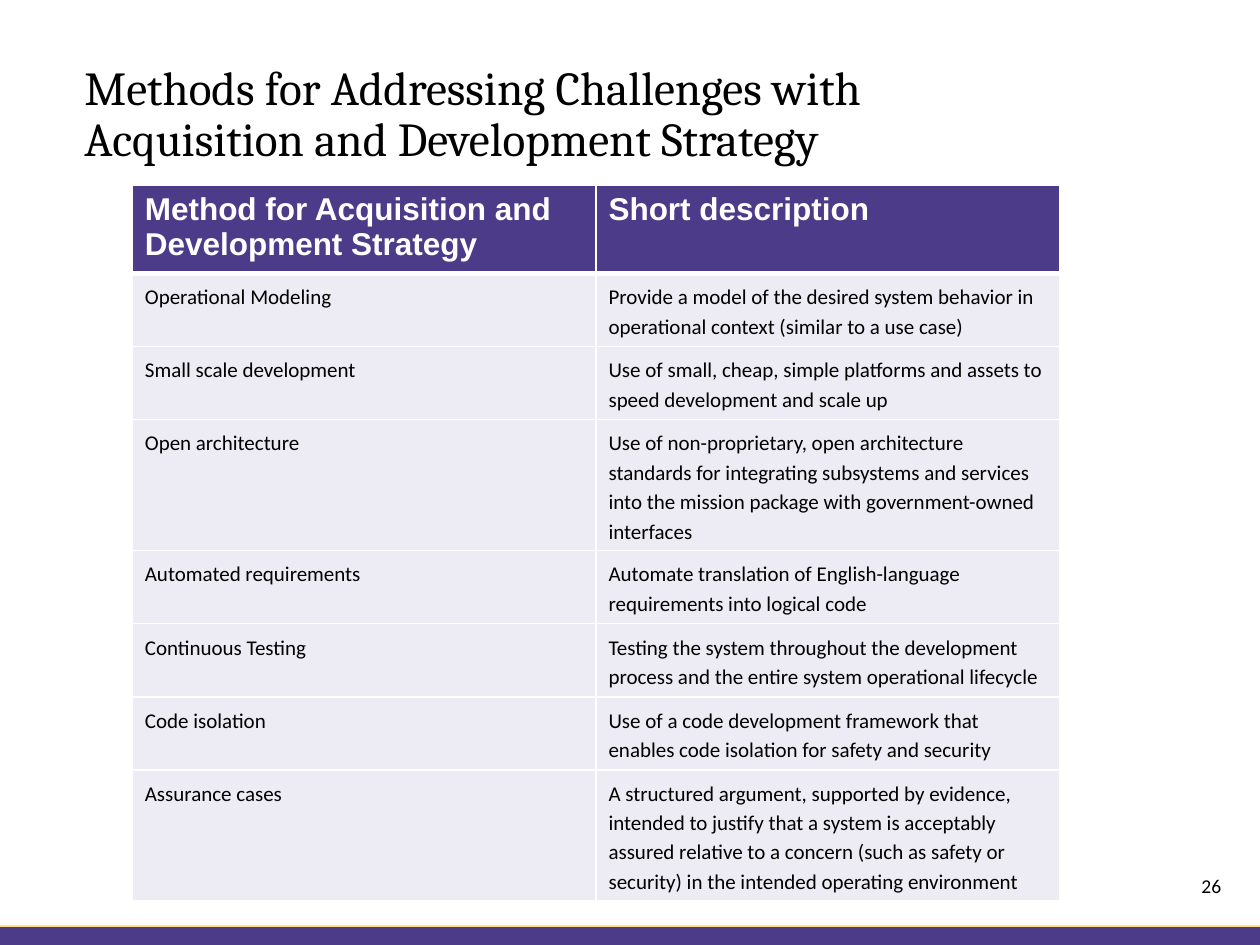
from lxml import etree
from pptx import Presentation
from pptx import util as u
from pptx.dml.color import RGBColor
from pptx.enum import shapes, text
from pptx.oxml.ns import qn

WIDE, HIGH = 10, 7.5
PURPLE, GOLD, PALE, WHITE, BLACK = "4C3B89", "FFDF7F", "EDEBF3", "FFFFFF", "000000"

TITLE = "Methods for Addressing Challenges with\vAcquisition and Development Strategy"
PAGE = "26"
ROWS = [
    ("Method for Acquisition and Development Strategy", "Short description"),
    ("Operational Modeling",
     "Provide a model of the desired system behavior in operational context "
     "(similar to a use case)"),
    ("Small scale development",
     "Use of small, cheap, simple platforms and assets to speed development and scale up"),
    ("Open architecture",
     "Use of non-proprietary, open architecture standards for integrating subsystems and "
     "services into the mission package with government-owned interfaces"),
    ("Automated requirements",
     "Automate translation of English-language requirements into logical code"),
    ("Continuous Testing",
     "Testing the system throughout the development process and the entire system "
     "operational lifecycle"),
    ("Code isolation",
     "Use of a code development framework that enables code isolation for safety and security"),
    ("Assurance cases",
     "A structured argument, supported by evidence, intended to justify that a system is "
     "acceptably assured relative to a concern (such as safety or security) in the intended "
     "operating environment"),
]

HEAD = {"font": {"name": "Arial", "size": u.Pt(18), "bold": True}, "color": WHITE}
BODY = {"font": {"name": "Calibri", "size": u.Pt(12), "bold": False}, "color": BLACK,
        "para": {"line_spacing": 1.15, "space_after": u.Pt(10)}}
NAME = {"font": {"name": "Cambria", "size": u.Pt(27)}, "color": BLACK,
        "para": {"line_spacing": 0.9, "alignment": text.PP_ALIGN.LEFT}}
FOOT = {"font": {"name": "Calibri", "size": u.Pt(11.2)}, "color": BLACK,
        "para": {"alignment": text.PP_ALIGN.RIGHT}}


def rgb(code):
    return RGBColor.from_string(code)


def box(*sizes):
    return [u.Inches(size) for size in sizes]


def assign(item, values):
    for key, value in values.items():
        setattr(item, key, value)


def write(frame, words, style):
    frame.text = words
    frame.word_wrap = True
    for para in frame.paragraphs:
        assign(para, style.get("para", {}))
        for run in para.runs:
            assign(run.font, style["font"])
            run.font.color.rgb = rgb(style["color"])


def edge(cell, widths):
    """Draw white cell borders; they must come before the cell's fill."""
    props = cell._tc.get_or_add_tcPr()
    for side, width in widths.items():
        line = etree.SubElement(props, qn(f"a:ln{side}"), w=str(u.Pt(width)))
        fill = etree.SubElement(line, qn("a:solidFill"))
        etree.SubElement(fill, qn("a:srgbClr"), val=WHITE)


def add_foot(slide):
    top = 0.98 * HIGH
    band = slide.shapes.add_shape(shapes.MSO_SHAPE.RECTANGLE, *box(0, top, WIDE, HIGH - top))
    band.shadow.inherit = False
    band.fill.solid()
    band.fill.fore_color.rgb = rgb(PURPLE)
    band.line.fill.background()
    rule = slide.shapes.add_connector(shapes.MSO_CONNECTOR.STRAIGHT, *box(0, top, WIDE, top))
    rule.line.color.rgb = rgb(GOLD)
    rule.line.width = u.Pt(1)
    etree.SubElement(rule._element.spPr, qn("a:effectLst"))
    page = slide.shapes.add_textbox(*box(7.54, 6.89, 2.25, 0.4))
    write(page.text_frame, PAGE, FOOT)


def add_title(slide):
    title = slide.shapes.title
    assign(title, dict(zip(("left", "top", "width", "height"), box(0.57, 0.46, 7.33, 0.59))))
    frame = title.text_frame
    write(frame, TITLE, NAME)
    frame.auto_size = text.MSO_AUTO_SIZE.NONE
    frame.vertical_anchor = text.MSO_ANCHOR.TOP


def add_methods(slide):
    row = 0.56
    grid = slide.shapes.add_table(len(ROWS), 2, *box(1.05, 1.47, 7.36, row * len(ROWS))).table
    for r, words in enumerate(ROWS):
        for c, word in enumerate(words):
            cell = grid.cell(r, c)
            head = r == 0
            edge(cell, {"L": 1, "R": 1, "T": 3 if r == 1 else 1, "B": 3 if head else 1})
            cell.fill.solid()
            cell.fill.fore_color.rgb = rgb(PURPLE if head else PALE)
            write(cell.text_frame, word, HEAD if head else BODY)
            if not head:
                cell.margin_top = cell.margin_bottom = u.Inches(0.06)


def main():
    deck = Presentation()
    deck.slide_width, deck.slide_height = box(WIDE, HIGH)
    slide = deck.slides.add_slide(deck.slide_layouts[5])
    add_foot(slide)
    add_title(slide)
    add_methods(slide)
    deck.save("out.pptx")


if __name__ == "__main__":
    main()
